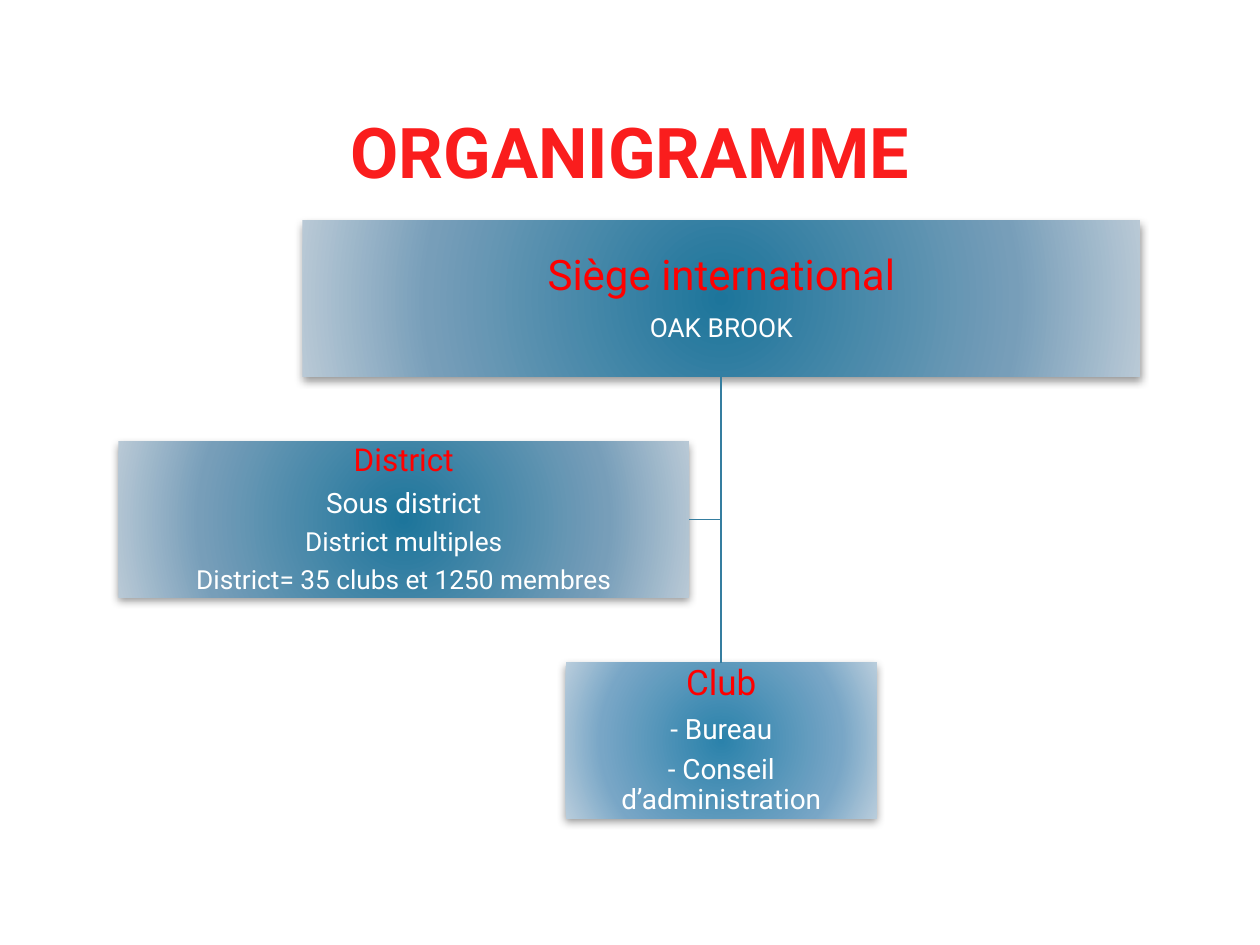
from pptx import Presentation
from pptx.dml.color import RGBColor
from pptx.enum.shapes import MSO_CONNECTOR, MSO_SHAPE
from pptx.enum.text import MSO_ANCHOR, PP_ALIGN
from pptx.oxml import parse_xml
from pptx.oxml.ns import nsdecls, qn
from pptx.util import Pt

THEME = {
    "font": "Roboto",
    "title": "FA1D1D",
    "heading": "FF0000",
    "body": "FFFFFF",
    "line": "357EA0",
    "dark": ("1D759B", "779EB9", "B9C9D6"),
    "light": ("2B82AB", "78A6C6", "B9CDDC"),
    "title_size": 40,
}
AXIS, TOP, HEIGHT, PITCH = 412.2, 126, 89.3, 126.3
LEVELS = {
    "head_office": (172.8, 478.8, "dark", 1.5, [("Siège international", 24), ("OAK BROOK", 15)]),
    "district": (67.7, 326.1, "dark", 0.7, [
        ("District", 18), ("Sous district", 16), ("District multiples", 15),
        ("District= 35 clubs et 1250 membres", 15)]),
    "club": (323.3, 177.8, "light", 0.7, [
        ("Club", 20), ("- Bureau", 16), ("- Conseil d’administration", 16)]),
}


def write(para, text, size, color, bold=False):
    para.alignment = PP_ALIGN.CENTER
    span = para.add_run()
    span.text = text
    span.font.color.rgb = RGBColor.from_string(color)
    for name, value in {"name": THEME["font"], "size": Pt(size), "bold": bold}.items():
        setattr(span.font, name, value)


def connect(start, end):
    link = page.shapes.add_connector(MSO_CONNECTOR.STRAIGHT, *start, *end)
    link.line.color.rgb = RGBColor.from_string(THEME["line"])
    link.line.width = Pt(1)
    link._element.spPr.append(parse_xml(f"<a:effectLst {nsdecls('a')}/>"))
    return link


deck = Presentation()
deck.slide_width, deck.slide_height = Pt(720), Pt(540)
page = deck.slides.add_slide(deck.slide_layouts[6])

title = page.shapes.add_textbox(Pt(43.2), Pt(8.6), Pt(633.6), Pt(105.2))
title.text_frame.word_wrap = True
title.text_frame.vertical_anchor = MSO_ANCHOR.BOTTOM
write(title.text_frame.paragraphs[0], "ORGANIGRAMME", THEME["title_size"], THEME["title"], True)

boxes = {}
for row, (level, (left, width, shade, inset, lines)) in enumerate(LEVELS.items()):
    box = page.shapes.add_shape(
        MSO_SHAPE.RECTANGLE, Pt(left), Pt(TOP + row * PITCH), Pt(width), Pt(HEIGHT))
    boxes[level] = box
    box.line.fill.background()
    box.shadow.inherit = False
    properties = box._element.spPr
    stops = "".join(
        f'<a:gs pos="{position}"><a:srgbClr val="{color}"/></a:gs>'
        for position, color in zip((0, 69000, 100000), THEME[shade]))
    properties.find(qn("a:prstGeom")).addnext(parse_xml(
        f'<a:gradFill {nsdecls("a")} rotWithShape="1"><a:gsLst>{stops}</a:gsLst>'
        '<a:path path="circle"><a:fillToRect l="50000" t="50000" r="50000" b="50000"/>'
        '</a:path></a:gradFill>'))
    properties.find(qn("a:effectLst")).append(parse_xml(
        f'<a:outerShdw {nsdecls("a")} blurRad="{Pt(5)}" dist="{Pt(2)}" dir="5400000" '
        'rotWithShape="0"><a:srgbClr val="000000"><a:alpha val="40000"/></a:srgbClr>'
        '</a:outerShdw>'))
    frame = box.text_frame
    frame_format = {"word_wrap": True, "vertical_anchor": MSO_ANCHOR.MIDDLE}
    frame_format.update({f"margin_{side}": Pt(inset) for side in ("left", "top", "right", "bottom")})
    for name, value in frame_format.items():
        setattr(frame, name, value)
    for index, (text, size) in enumerate(lines):
        para = frame.add_paragraph() if index else frame.paragraphs[0]
        para.line_spacing = 0.9
        para.space_after = Pt(0.35 * size)
        write(para, text, size, THEME["body" if index else "heading"])

trunk = connect((Pt(AXIS), Pt(TOP + HEIGHT)), (Pt(AXIS), Pt(TOP + 2 * PITCH)))
trunk.begin_connect(boxes["head_office"], 2)
trunk.end_connect(boxes["club"], 0)

district = boxes["district"]
middle = district.top + district.height // 2
branch = connect((district.left + district.width, middle), (Pt(AXIS), middle))
branch.begin_connect(district, 3)

deck.save("out.pptx")
